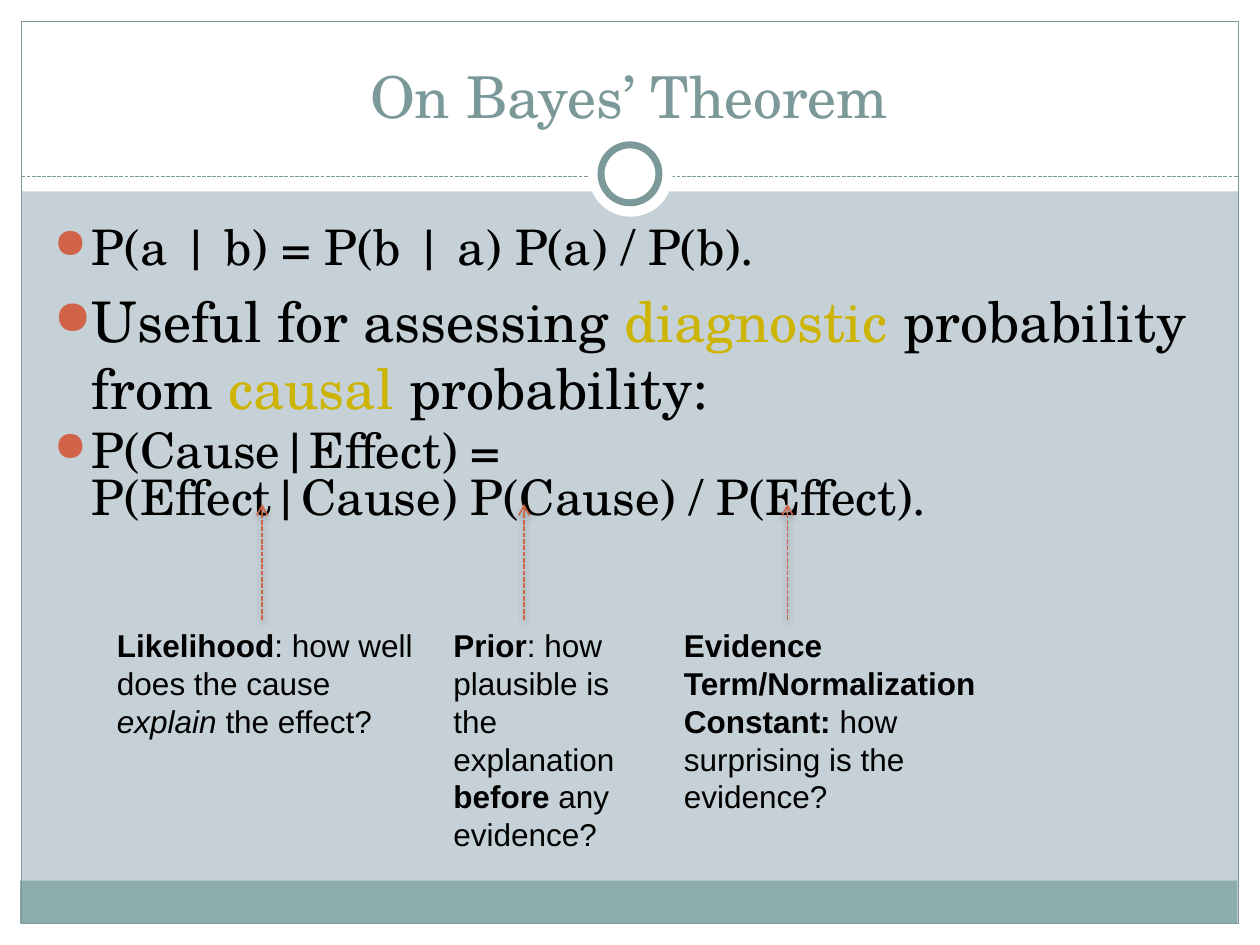
from lxml import etree
from pptx import Presentation
from pptx.dml.color import RGBColor
from pptx.enum.dml import MSO_LINE
from pptx.enum.shapes import MSO_CONNECTOR, MSO_SHAPE
from pptx.enum.text import MSO_ANCHOR, MSO_AUTO_SIZE, PP_ALIGN
from pptx.oxml import parse_xml
from pptx.oxml.ns import nsdecls, qn
from pptx.util import Inches, Pt

RECTANGLE, OVAL = MSO_SHAPE.RECTANGLE, MSO_SHAPE.OVAL
STRAIGHT, DASH = MSO_CONNECTOR.STRAIGHT, MSO_LINE.SQUARE_DOT
CENTER, BOTTOM = PP_ALIGN.CENTER, MSO_ANCHOR.BOTTOM
NO_FIT, GROW = MSO_AUTO_SIZE.NONE, MSO_AUTO_SIZE.SHAPE_TO_FIT_TEXT

SERIF, SANS = "TeX Gyre Schola", "Arial"
WHITE, BLACK = "FFFFFF", "000000"
BACKGROUND, BAND, FRAME = "C5D1D7", "8CADAE", "7C999A"
ACCENT, HIGHLIGHT = "D16349", "CCB400"


def color(value):
    return RGBColor.from_string(value)


def inches(values):
    return [Inches(value) for value in values]


def add_block(slide, kind, box, fill=None, line=None, width=0.75):
    shape = slide.shapes.add_shape(kind, *inches(box))
    shape.shadow.inherit = False
    if fill:
        shape.fill.solid()
        shape.fill.fore_color.rgb = color(fill)
    else:
        shape.fill.background()
    if line:
        shape.line.color.rgb = color(line)
        shape.line.width = Pt(width)
    else:
        shape.line.fill.background()


def add_dashed_line(slide, start, end, line, width):
    connector = slide.shapes.add_connector(STRAIGHT, *inches(start + end))
    connector.line.color.rgb = color(line)
    connector.line.width = Pt(width)
    connector.line.dash_style = DASH
    effects = etree.SubElement(connector._element.spPr, qn("a:effectLst"))
    return connector, effects


def add_arrow(slide, start, end):
    connector, effects = add_dashed_line(slide, start, end, ACCENT, 0.9)
    etree.SubElement(connector.line._get_or_add_ln(), qn("a:tailEnd"), type="arrow")
    effects.append(parse_xml(
        f'<a:outerShdw {nsdecls("a")} blurRad="{Pt(4)}" dist="{Pt(2)}" dir="5400000" '
        f'rotWithShape="0"><a:srgbClr val="{BLACK}"><a:alpha val="35000"/>'
        '</a:srgbClr></a:outerShdw>'))


def add_run(paragraph, text, size=18, font=SANS, fill=BLACK, bold=False, italic=False):
    run = paragraph.add_run()
    run.text = text
    run.font.size = Pt(size)
    run.font.name = font
    run.font.color.rgb = color(fill)
    run.font.bold = bold
    run.font.italic = italic


def add_text_box(slide, box, fit):
    frame = slide.shapes.add_textbox(*inches(box)).text_frame
    frame.word_wrap = True
    frame.auto_size = fit
    return frame


def format_bullet(paragraph, size, line_spacing):
    paragraph.line_spacing = line_spacing
    paragraph.space_before = Pt(size * 0.2)
    properties = paragraph._p.get_or_add_pPr()
    properties.set("marL", str(Inches(0.3)))
    properties.set("indent", str(-Inches(0.3)))
    bullet_color = etree.SubElement(properties, qn("a:buClr"))
    etree.SubElement(bullet_color, qn("a:srgbClr"), val=ACCENT)
    etree.SubElement(properties, qn("a:buSzPct"), val="85000")
    etree.SubElement(properties, qn("a:buChar"), char="●")


def add_backdrop(slide):
    slide.background.fill.solid()
    slide.background.fill.fore_color.rgb = color(BACKGROUND)
    # White margins, with a deep one behind the title
    for box in ((0, 7.33, 10, 0.17), (0, 0, 10, 1.52),
                (0, 0, 0.17, 7.5), (9.83, 0, 0.17, 7.5)):
        add_block(slide, RECTANGLE, box, fill=WHITE)
    # Footer band, frame and divider
    add_block(slide, RECTANGLE, (0.16, 6.99, 9.66, 0.34), fill=BAND)
    add_block(slide, RECTANGLE, (0.17, 0.17, 9.66, 7.16), line=FRAME)
    add_dashed_line(slide, (0.17, 1.4), (9.83, 1.4), FRAME, 0.75)
    # Ring on the divider
    add_block(slide, OVAL, (4.67, 1.05, 0.67, 0.67), fill=WHITE)
    add_block(slide, OVAL, (4.77, 1.15, 0.46, 0.46), fill=WHITE, line=FRAME, width=4)


def add_title(slide):
    title = slide.shapes.title
    title.left, title.top, title.width, title.height = inches((0.33, 0.25, 9.33, 0.83))
    frame = title.text_frame
    frame.auto_size = NO_FIT
    frame.vertical_anchor = BOTTOM
    paragraph = frame.paragraphs[0]
    paragraph.alignment = CENTER
    add_run(paragraph, "On Bayes’ Theorem", size=33, font=SERIF, fill=FRAME)
    # Bring the title in front of the white margin
    title._element.getparent().append(title._element)


def add_body(slide):
    frame = add_text_box(slide, (0.33, 1.67, 9.3, 2.66), NO_FIT)
    bullets = [
        (28, 1.0, [("P(a | b) = P(b | a) P(a) / P(b).", BLACK)]),
        (32, 1.0, [("Useful for assessing ", BLACK), ("diagnostic ", HIGHLIGHT),
                   ("probability from ", BLACK), ("causal ", HIGHLIGHT),
                   ("probability:", BLACK)]),
        (28, 0.8, [("P(Cause|Effect) = ", BLACK), None,
                   ("P(Effect|Cause) P(Cause) / P(Effect).", BLACK)]),
    ]
    for index, (size, line_spacing, parts) in enumerate(bullets):
        paragraph = frame.add_paragraph() if index else frame.paragraphs[0]
        format_bullet(paragraph, size, line_spacing)
        for part in parts:
            if part is None:
                paragraph.add_line_break()
            else:
                add_run(paragraph, part[0], size=size, font=SERIF, fill=part[1])


def add_notes_on_terms(slide):
    bold, italic = {"bold": True}, {"italic": True}
    # Left, width and height of the text, x of its arrow, formatted parts
    terms = [
        (0.83, 2.58, 1.01, 2.08, [
            ("Likelihood", bold), (": how well does the cause ", {}),
            ("explain", italic), (" the effect?", {})]),
        (3.5, 1.75, 1.92, 4.16, [
            ("Prior", bold), (": how plausible is the explanation ", {}),
            ("before", bold), (" any evidence?", {})]),
        (5.33, 2.67, 1.62, 6.25, [
            ("Evidence Term/Normalization Constant: ", bold),
            ("how surprising is the evidence?", {})]),
    ]
    top = 4.92
    for left, width, height, arrow_x, parts in terms:
        frame = add_text_box(slide, (left, top, width, height), GROW)
        for text, style in parts:
            add_run(frame.paragraphs[0], text, **style)
        add_arrow(slide, (arrow_x, top), (arrow_x, 4))


def main():
    presentation = Presentation()
    presentation.slide_width, presentation.slide_height = inches((10, 7.5))
    slide = presentation.slides.add_slide(presentation.slide_layouts[5])
    add_backdrop(slide)
    add_title(slide)
    add_body(slide)
    add_notes_on_terms(slide)
    presentation.save("out.pptx")


if __name__ == "__main__":
    main()
